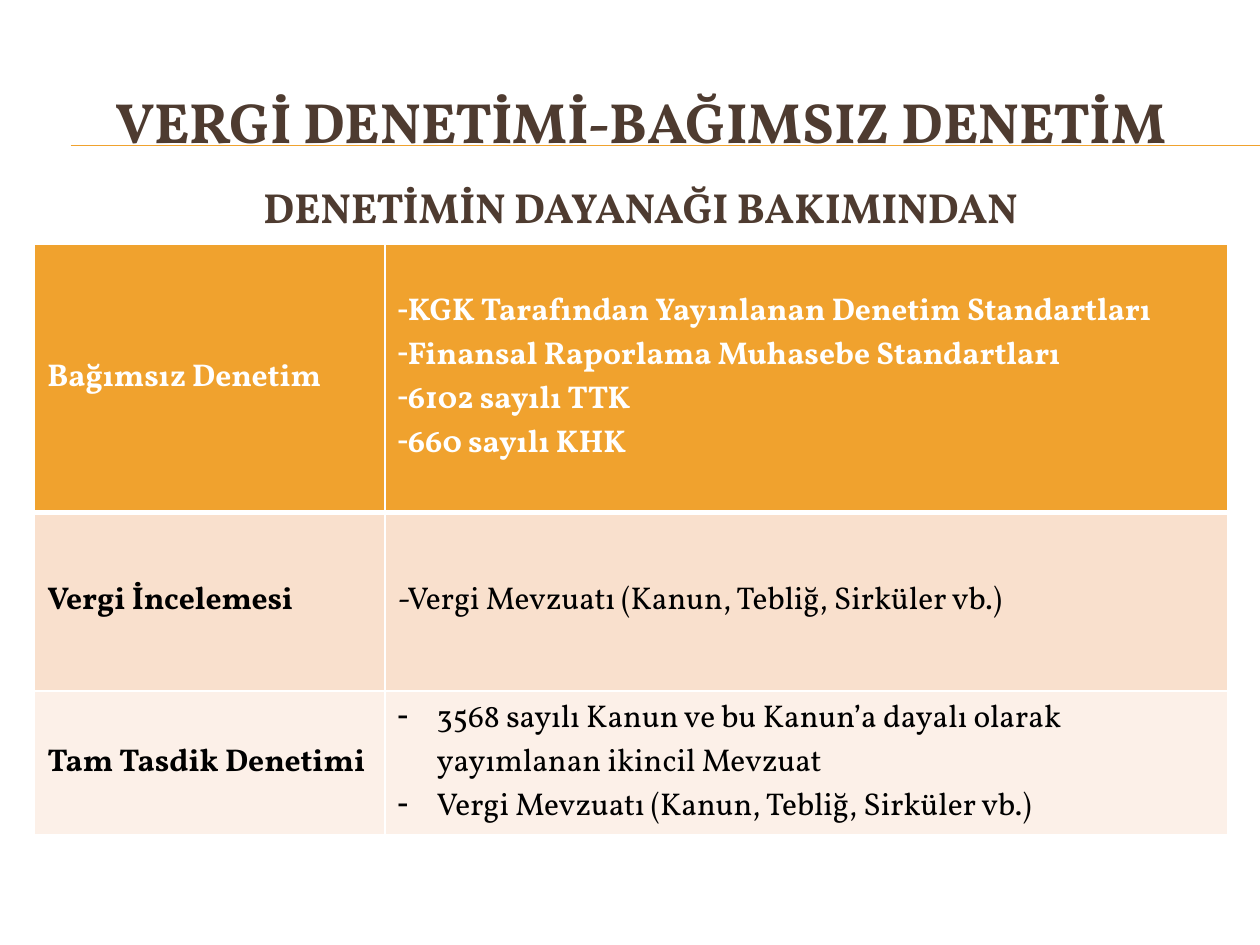
from lxml import etree
from pptx import Presentation
from pptx.dml.color import RGBColor
from pptx.enum.shapes import MSO_CONNECTOR
from pptx.enum.text import MSO_ANCHOR, PP_ALIGN
from pptx.oxml.ns import qn
from pptx.util import Cm, Pt

CENTER, LEFT = PP_ALIGN.CENTER, PP_ALIGN.LEFT
MIDDLE, TOP = MSO_ANCHOR.MIDDLE, MSO_ANCHOR.TOP
STRAIGHT = MSO_CONNECTOR.STRAIGHT

# Content
FONT = "Vollkorn"
ORANGE, BROWN, WHITE, BLACK = "F0A22E", "4E3B30", "FFFFFF", "000000"
TITLE = "VERGİ DENETİMİ-BAĞIMSIZ DENETİM"
SUBTITLE = "DENETİMİN DAYANAĞI BAKIMINDAN"
COLUMN_WIDTHS = (7.06, 16.99)
AUDITS = [
    dict(audit="Bağımsız Denetim", height=5.4, fill=ORANGE, color=WHITE,
         bold=True, bullet=True, indent=0, bottom=3,
         bases=["KGK Tarafından Yayınlanan Denetim Standartları",
                "Finansal Raporlama Muhasebe Standartları",
                "6102 sayılı TTK",
                "660 sayılı KHK"]),
    dict(audit="Vergi İncelemesi", height=3.6, fill="F9E0CD", color=BLACK,
         bold=False, bullet=False, indent=0, bottom=1,
         bases=["-Vergi Mevzuatı (Kanun, Tebliğ, Sirküler vb.)"]),
    dict(audit="Tam Tasdik Denetimi", height=2.9, fill="FCF0E8", color=BLACK,
         bold=False, bullet=True, indent=0.79, bottom=1,
         bases=["3568 sayılı Kanun ve bu Kanun’a dayalı olarak yayımlanan ikincil Mevzuat",
                "Vergi Mevzuatı (Kanun, Tebliğ, Sirküler vb.)"]),
]


def rgb(color):
    return RGBColor.from_string(color)


def write(frame, lines, size, color, bold=True, align=LEFT):
    for i, line in enumerate(lines):
        paragraph = frame.paragraphs[0] if i == 0 else frame.add_paragraph()
        paragraph.alignment = align
        run = paragraph.add_run()
        run.text = line
        run.font.name, run.font.size, run.font.bold = FONT, Pt(size), bold
        run.font.color.rgb = rgb(color)


def add_dashes(frame, indent):
    for paragraph in frame.paragraphs:
        props = paragraph._p.get_or_add_pPr()
        props.set("marL", str(Cm(indent)))
        props.set("indent", str(-Cm(indent)))
        etree.SubElement(props, qn("a:buFontTx"))
        etree.SubElement(props, qn("a:buChar")).set("char", "-")


def set_borders(cell, top, bottom):
    props = cell._tc.get_or_add_tcPr()
    widths = {"lnL": 1, "lnR": 1, "lnT": top, "lnB": bottom}
    for i, (side, width) in enumerate(widths.items()):
        border = etree.Element(qn(f"a:{side}"), w=str(Pt(width)))
        fill = etree.SubElement(border, qn("a:solidFill"))
        etree.SubElement(fill, qn("a:srgbClr")).set("val", WHITE)
        props.insert(i, border)


prs = Presentation()
prs.slide_width, prs.slide_height = Cm(25.4), Cm(19.05)
slide = prs.slides.add_slide(prs.slide_layouts[5])
shapes = slide.shapes

# Double rule behind the title, close enough to read as one line
for y in (2.93, 2.94):
    rule = shapes.add_connector(STRAIGHT, Cm(1.43), Cm(y), prs.slide_width, Cm(y))
    rule.line.color.rgb, rule.line.width = rgb(ORANGE), Pt(0.75)
    etree.SubElement(rule._element.spPr, qn("a:effectLst"))
    shapes._spTree.insert(2, rule._element)

# Title and subtitle share one column
title = shapes.title
subtitle = shapes.add_textbox(0, 0, 0, 0)
for heading, text, size, top, height, anchor in (
        (title, TITLE, 32.4, 1.27, 2.34, MIDDLE),
        (subtitle, SUBTITLE, 24, 3.53, 1.4, TOP)):
    heading.left, heading.top = Cm(0.85), Cm(top)
    heading.width, heading.height = Cm(24.13), Cm(height)
    heading.text_frame.word_wrap = True
    heading.text_frame.vertical_anchor = anchor
    write(heading.text_frame, [text], size, BROWN, align=CENTER)
subtitle.text_frame.paragraphs[0].space_before = Pt(4.8)

# Table of audits and their legal bases
table = shapes.add_table(len(AUDITS), len(COLUMN_WIDTHS), Cm(0.7), Cm(4.93),
                         Cm(sum(COLUMN_WIDTHS)),
                         Cm(sum(a["height"] for a in AUDITS))).table
for column, width in zip(table.columns, COLUMN_WIDTHS):
    column.width = Cm(width)

top_border = 1
for row, audit in zip(table.rows, AUDITS):
    row.height = Cm(audit["height"])
    name_cell, bases_cell = row.cells
    write(name_cell.text_frame, [audit["audit"]], 18, audit["color"])
    write(bases_cell.text_frame, audit["bases"], 18, audit["color"], audit["bold"])
    if audit["bullet"]:
        add_dashes(bases_cell.text_frame, audit["indent"])
    for cell in (name_cell, bases_cell):
        cell.vertical_anchor = MIDDLE
        cell.fill.solid()
        cell.fill.fore_color.rgb = rgb(audit["fill"])
        set_borders(cell, top_border, audit["bottom"])
    top_border = audit["bottom"]

prs.save("out.pptx")
